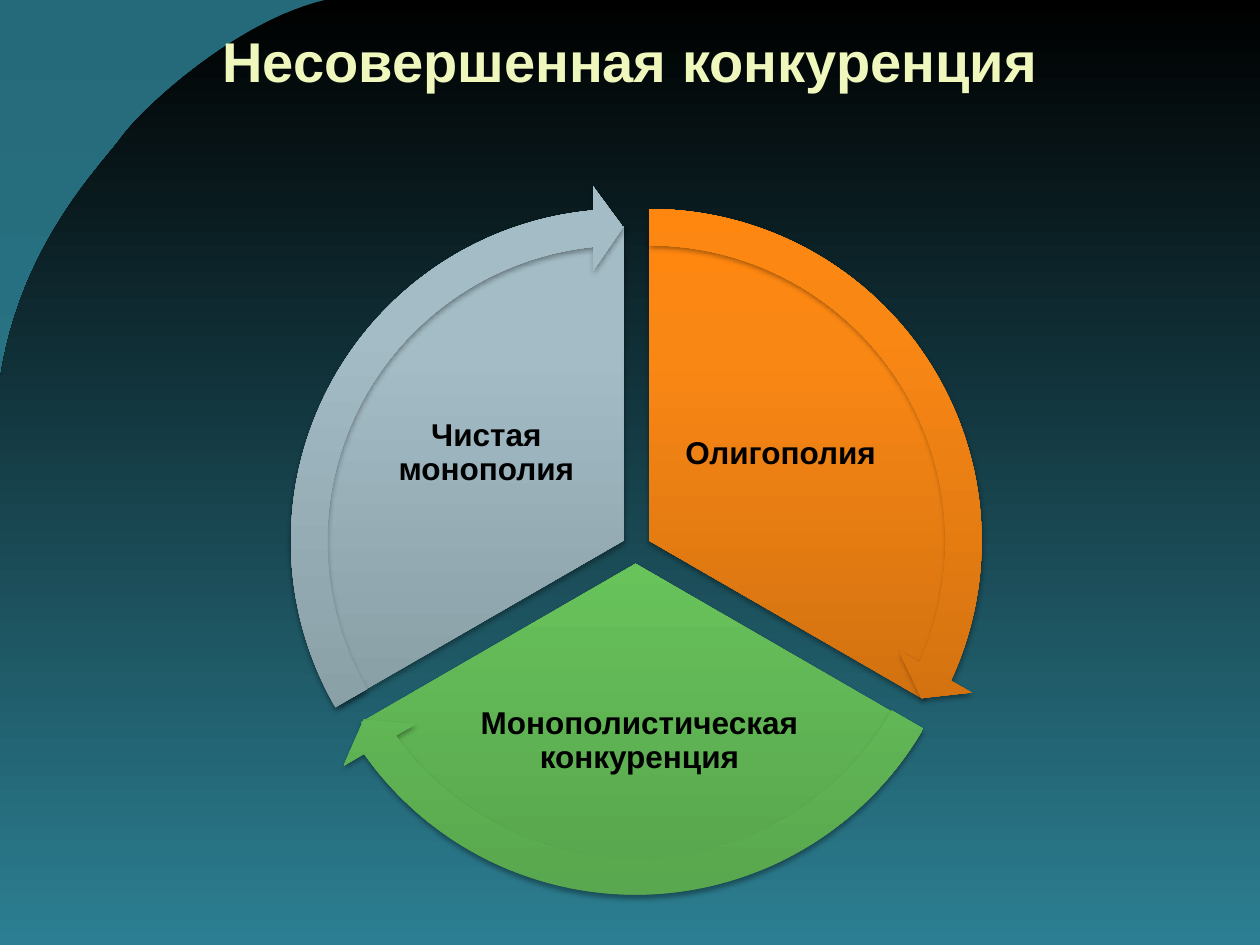
import pptx
import pptx.dml.color
import pptx.enum.shapes
import pptx.enum.text
import pptx.oxml
import pptx.oxml.ns
import pptx.util
from copy import deepcopy
from dataclasses import dataclass

Inches = pptx.util.Inches
Pt = pptx.util.Pt
Preset = pptx.enum.shapes.MSO_SHAPE


@dataclass(frozen=True)
class Theme:
    font: str = "Arial"
    title_size: int = 32
    label_size: int = 18
    title_color: str = "F0F7BD"
    label_color: str = "000000"
    background: tuple = ((0, "256A7A"), (100, "2C7F92"))
    panel: tuple = ((0, "000000"), (100, "2C7F92"))
    orange: tuple = ((0, "C0680F"), (80, "F98714"), (100, "FF8710"))
    green: tuple = ((0, "58A54D"), (80, "72D664"), (100, "71DA62"))
    gray: tuple = ((0, "7D9198"), (80, "A3BCC5"), (100, "A3BDC6"))


def rgb(color):
    return pptx.dml.color.RGBColor.from_string(color)


def fill_gradient(fill, parent, stops, angle):
    """Fill with (percent, colour) stops; the angle runs counter-clockwise."""
    fill.gradient()
    fill.gradient_angle = angle
    stop_list = next(parent.iter(pptx.oxml.ns.qn("a:gsLst")))
    while len(stop_list) < len(stops):
        stop_list.append(deepcopy(stop_list[-1]))
    for stop, (percent, color) in zip(fill.gradient_stops, stops):
        stop.position = percent / 100
        stop.color.rgb = rgb(color)


def shadow_effect(opacity, blur, distance, degrees):
    return pptx.oxml.parse_xml(
        f'<a:effectLst {pptx.oxml.ns.nsdecls("a")}>'
        f'<a:outerShdw blurRad="{Pt(blur)}" dist="{Pt(distance)}" '
        f'dir="{degrees * 60000}" algn="ctr" rotWithShape="0">'
        f'<a:srgbClr val="000000"><a:alpha val="{opacity * 1000}"/></a:srgbClr>'
        '</a:outerShdw></a:effectLst>'
    )


def curve_points(start, control_1, control_2, end, steps=24):
    """Points along a cubic curve, without its start."""
    points = []
    for step in range(1, steps + 1):
        t = step / steps
        weights = ((1 - t) ** 3, 3 * t * (1 - t) ** 2, 3 * t * t * (1 - t), t ** 3)
        corners = (start, control_1, control_2, end)
        points.append(tuple(
            sum(weight * corner[axis] for weight, corner in zip(weights, corners))
            for axis in (0, 1)
        ))
    return points


class SlideBuilder:
    def __init__(self, slide, theme):
        self.slide = slide
        self.theme = theme

    def background(self, stops):
        fill_gradient(self.slide.background.fill, self.slide._element, stops, 270)

    def panel(self, points, stops):
        emu_points = [(Inches(x), Inches(y)) for x, y in points]
        builder = self.slide.shapes.build_freeform(*emu_points[0])
        builder.add_line_segments(emu_points[1:], close=True)
        shape = builder.convert_to_shape()
        shape.shadow.inherit = False
        shape.line.fill.background()
        fill_gradient(shape.fill, shape._element, stops, 270)

    def preset(self, kind, box, adjustments, stops):
        shape = self.slide.shapes.add_shape(kind, *map(Inches, box))
        for index, value in enumerate(adjustments):
            shape.adjustments[index] = value
        fill_gradient(shape.fill, shape._element, stops, 90)
        shape.line.fill.background()
        shape._element.spPr.append(shadow_effect(35, 3.1, 1.8, 90))

    def text(self, box, text, size, color, margin, line_spacing=1.0, shadow=False):
        frame = self.slide.shapes.add_textbox(*map(Inches, box)).text_frame
        frame.word_wrap = True
        frame.vertical_anchor = pptx.enum.text.MSO_ANCHOR.MIDDLE
        frame.margin_left = frame.margin_right = Inches(margin)
        frame.margin_top = frame.margin_bottom = Inches(min(margin, 0.05))
        paragraph = frame.paragraphs[0]
        paragraph.alignment = pptx.enum.text.PP_ALIGN.CENTER
        paragraph.line_spacing = line_spacing
        run = paragraph.add_run()
        run.text = text
        run.font.size = Pt(size)
        run.font.bold = True
        run.font.color.rgb = rgb(color)
        if shadow:
            run.font._element.append(shadow_effect(100, 3, 3, 45))
        run.font.name = self.theme.font

    def title(self, box, text):
        self.text(box, text, self.theme.title_size, self.theme.title_color,
                  0.1, shadow=True)

    def label(self, box, text):
        self.text(box, text, self.theme.label_size, self.theme.label_color,
                  0.03, line_spacing=0.9)


def main():
    presentation = pptx.Presentation()
    presentation.slide_width = Inches(10)
    presentation.slide_height = Inches(7.5)
    theme = Theme()
    slide = presentation.slides.add_slide(presentation.slide_layouts[6])
    builder = SlideBuilder(slide, theme)

    builder.background(theme.background)
    outline = [(2.58, 0)]
    for curve in (
        ((1.9, 0.16), (1.16, 0.83), (0.98, 1.07)),
        ((0.8, 1.32), (0.16, 1.94), (0, 3.01)),
    ):
        outline += curve_points(outline[-1], *curve)
    builder.panel(outline + [(0, 7.5), (10, 7.5), (10, 0)], theme.panel)
    builder.title((0.5, 0, 9, 0.95), "Несовершенная конкуренция")

    # text, label box, pie box, pie angles, arrow corner, arrow angles, colours
    sectors = (
        ("Олигополия", (5.29, 2.87, 1.81, 1.47),
         (2.62, 1.83, 5.06, 4.92), (162, 18),
         (2.33, 1.47), (14.725, 161.994), theme.orange),
        ("Монополистическая конкуренция", (3.73, 5.22, 2.69, 1.32),
         (2.53, 1.96, 5.03, 5.03), (18, 90),
         (2.22, 1.64), (86.72, 18.005), theme.green),
        ("Чистая монополия", (2.92, 2.85, 1.88, 1.49),
         (2.32, 1.79, 5.26, 5), (90, 162),
         (2.12, 1.47), (158.73, 90), theme.gray),
    )
    for text, label_box, pie_box, pie_angles, _, _, stops in sectors:
        builder.preset(Preset.PIE, pie_box, pie_angles, stops)
        builder.label(label_box, text)
    arrow_size = (5.65, 5.65)
    for *_, corner, arrow_angles, stops in sectors:
        builder.preset(Preset.CIRCULAR_ARROW, corner + arrow_size,
                       (0.051, 3.275, *arrow_angles, 0.059), stops)

    presentation.save("out.pptx")


if __name__ == "__main__":
    main()
